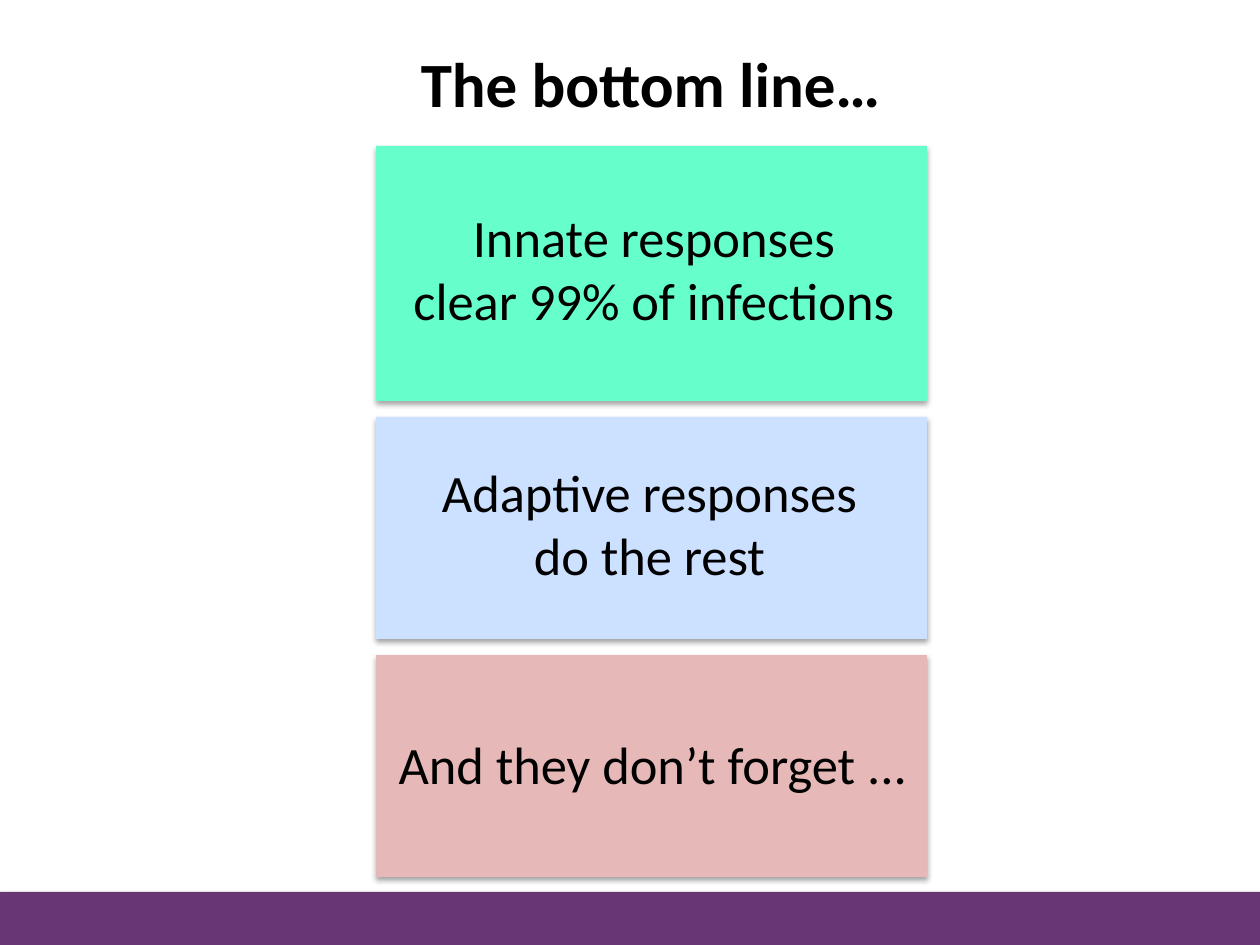
import pptx
import pptx.util
import pptx.dml.color
import pptx.enum.shapes
import pptx.enum.text
import pptx.oxml.ns
import lxml.etree

# Content: fill, card height, lines, text box (left, top, width, height)
TITLE = "The bottom line…"
CARDS = [
    ("66FFCC", 255, ["Innate responses", "clear 99% of infections"], (398, 199, 512, 204)),
    ("CCE0FF", 222, ["Adaptive responses", "do the rest"], (427, 454, 445, 140)),
    ("E6B9B8", 222, ["And they don’t forget ..."], (382, 726, 542, 77)),
]
BAR_COLOUR = "683672"

# Layout in px
SLIDE_WIDTH, SLIDE_HEIGHT = 1260, 945
CARD_LEFT, CARD_TOP, CARD_WIDTH, CARD_GAP = 376, 146, 551, 16
BAR_TOP = 892
TITLE_BOX = (63, 38, 1147, 89)
TITLE_INDENT = 41


def px(length):
    return pptx.util.Emu(round(length * 914400 / 126))


def colour(value):
    return pptx.dml.color.RGBColor.from_string(value)


def add_shadow(shape):
    shape.shadow.inherit = False
    effects = shape._element.spPr.find(pptx.oxml.ns.qn("a:effectLst"))
    shadow = lxml.etree.SubElement(
        effects, pptx.oxml.ns.qn("a:outerShdw"),
        blurRad=str(pptx.util.Pt(3.1)), dist=str(pptx.util.Pt(1.8)),
        dir="5400000", rotWithShape="0")
    black = lxml.etree.SubElement(shadow, pptx.oxml.ns.qn("a:srgbClr"), val="000000")
    lxml.etree.SubElement(black, pptx.oxml.ns.qn("a:alpha"), val="35000")


def add_block(slide, place, fill):
    block = slide.shapes.add_shape(
        pptx.enum.shapes.MSO_SHAPE.RECTANGLE, *map(px, place))
    block.fill.solid()
    block.fill.fore_color.rgb = colour(fill)
    block.line.fill.background()
    add_shadow(block)


def add_text(slide, place, lines, size, bold=False, wrap=False):
    frame = slide.shapes.add_textbox(*map(px, place)).text_frame
    frame.word_wrap = wrap
    for index, line in enumerate(lines):
        para = frame.add_paragraph() if index else frame.paragraphs[0]
        para.alignment = pptx.enum.text.PP_ALIGN.CENTER
        span = para.add_run()
        span.text = line
        span.font.name = "Calibri"
        span.font.size = pptx.util.Pt(size)
        span.font.bold = bold
        span.font.color.rgb = colour("000000")
    return frame


def main():
    deck = pptx.Presentation()
    deck.slide_width, deck.slide_height = px(SLIDE_WIDTH), px(SLIDE_HEIGHT)
    slide = deck.slides.add_slide(deck.slide_layouts[6])

    # Footer bar
    add_block(slide, (0, BAR_TOP, SLIDE_WIDTH, SLIDE_HEIGHT - BAR_TOP), BAR_COLOUR)

    # Stacked cards
    top = CARD_TOP
    for fill, height, lines, text_box in CARDS:
        add_block(slide, (CARD_LEFT, top, CARD_WIDTH, height), fill)
        add_text(slide, text_box, lines, 30)
        top += height + CARD_GAP

    # Title
    title = add_text(slide, TITLE_BOX, [TITLE], 36, bold=True, wrap=True)
    title.margin_left = px(TITLE_INDENT)

    deck.save("out.pptx")


if __name__ == "__main__":
    main()
